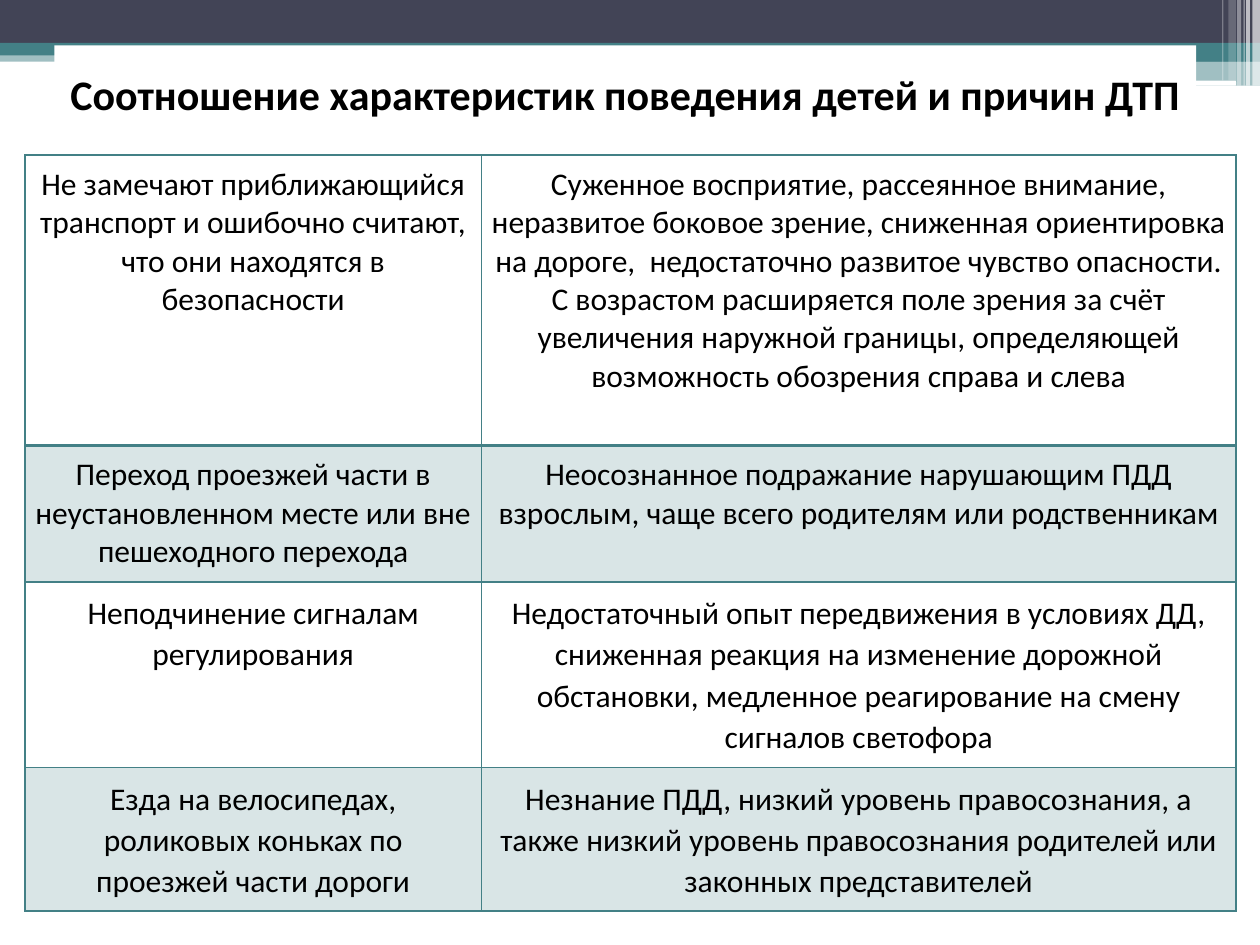
from lxml.etree import SubElement
from pptx import Presentation
from pptx.dml.color import RGBColor
from pptx.enum.shapes import MSO_SHAPE as Shape
from pptx.enum.text import MSO_ANCHOR as Anchor, PP_ALIGN as Align
from pptx.oxml.ns import qn
from pptx.util import Pt

TEAL, SLATE, WHITE, BLACK = "438086", "424456", "FFFFFF", "000000"

BANDS = [
    (0, 28.8, 720, 6.5, TEAL, 50),
    (0, 0, 720, 24.5, SLATE, 100),
    (0, 24.5, 720, 7.2, TEAL, 100),
    (426.2, 28.1, 293.8, 7.2, TEAL, 100),
    (426.2, 34.6, 293.8, 14.4, TEAL, 50),
]
STRIPES = [
    (715.7, 4.3, 49, 65),
    (712.1, 2.2, 49, 65),
    (710.6, 0.7, 49, 60),
    (707, 2.2, 49, 40),
    (702, 4.3, 46, 20),
    (698.4, 0.7, 46, 30),
]

TITLE = "Соотношение характеристик поведения детей и причин ДТП"
COLUMN_WIDTHS = [261, 431]
ROW_HEIGHTS = [166, 78, 106, 82]
ROWS = [
    ("Не замечают приближающийся транспорт и ошибочно считают, что они находятся в безопасности",
     "Суженное восприятие, рассеянное внимание, неразвитое боковое зрение, сниженная "
     "ориентировка на дороге,  недостаточно развитое чувство опасности. С возрастом "
     "расширяется поле зрения за счёт увеличения наружной границы, определяющей "
     "возможность обозрения справа и слева"),
    ("Переход проезжей части в неустановленном месте или вне пешеходного перехода",
     "Неосознанное подражание нарушающим ПДД взрослым, чаще всего родителям или родственникам"),
    ("Неподчинение сигналам регулирования",
     "Недостаточный опыт передвижения в условиях ДД, сниженная реакция на изменение "
     "дорожной обстановки, медленное реагирование на смену сигналов светофора"),
    ("Езда на велосипедах, роликовых коньках по проезжей части дороги",
     "Незнание ПДД, низкий уровень правосознания, а также низкий уровень правосознания "
     "родителей или законных представителей"),
]


def rgb(colour):
    """Turn a hex string into a colour."""
    return RGBColor.from_string(colour)


def paint(fill, properties, colour, opacity=100):
    """Fill an object with a solid colour at an opacity in percent."""
    fill.solid()
    fill.fore_color.rgb = rgb(colour)
    if opacity < 100:
        tone = properties.find(qn("a:solidFill"))[0]
        SubElement(tone, qn("a:alpha"), val=str(opacity * 1000))


def add_block(page, left, top, width, height, colour, opacity=100, kind=Shape.RECTANGLE):
    """Add a plain shape without a line or a shadow."""
    block = page.shapes.add_shape(kind, Pt(left), Pt(top), Pt(width), Pt(height))
    block.shadow.inherit = False
    block.line.fill.background()
    paint(block.fill, block._element.spPr, colour, opacity)
    return block


def write(frame, text, size=18, bold=False, spacing=None, after=None):
    """Write one centred paragraph."""
    frame.word_wrap = True
    para = frame.paragraphs[0]
    para.alignment = Align.CENTER
    if spacing:
        para.line_spacing = spacing
    if after:
        para.space_after = Pt(after)
    span = para.add_run()
    span.text = text
    span.font.name = "Calibri"
    span.font.size = Pt(size)
    span.font.bold = bold
    span.font.color.rgb = rgb(BLACK)


def add_borders(cell, top=1, bottom=1):
    """Draw the four borders of a cell with widths in points."""
    properties = cell._tc.get_or_add_tcPr()
    for side, width in {"L": 1, "R": 1, "T": top, "B": bottom}.items():
        line = SubElement(properties, qn(f"a:ln{side}"), w=str(Pt(width)))
        solid = SubElement(line, qn("a:solidFill"))
        SubElement(solid, qn("a:srgbClr"), val=TEAL)


def add_header(page):
    """Add the coloured bands and the thin stripes at the top."""
    for band in BANDS:
        add_block(page, *band)
    add_block(page, 580.3, 46.1, 126, 2.9, WHITE, kind=Shape.ROUNDED_RECTANGLE)
    for left, width, height, opacity in STRIPES:
        add_block(page, left, 0, width, height, WHITE, opacity)


def add_title(page):
    """Add the title in a white box."""
    box = page.shapes.add_textbox(Pt(31), Pt(26), Pt(652.5), Pt(45.3))
    paint(box.fill, box._element.spPr, WHITE)
    box.text_frame.vertical_anchor = Anchor.BOTTOM
    write(box.text_frame, TITLE, size=24, bold=True)


def add_behaviour_table(page):
    """Add the table of behaviours and their causes."""
    table = page.shapes.add_table(
        len(ROWS), len(COLUMN_WIDTHS), Pt(14.2), Pt(88.6),
        Pt(sum(COLUMN_WIDTHS)), Pt(sum(ROW_HEIGHTS))).table
    table.first_row = table.horz_banding = False
    for column, width in zip(table.columns, COLUMN_WIDTHS):
        column.width = Pt(width)
    for index, (height, texts) in enumerate(zip(ROW_HEIGHTS, ROWS)):
        table.rows[index].height = Pt(height)
        spacing, after = (1.07, 8) if index > 1 else (None, None)
        for cell, text in zip(table.rows[index].cells, texts):
            cell.margin_left = cell.margin_right = Pt(5.8)
            cell.margin_top = cell.margin_bottom = Pt(5.8)
            write(cell.text_frame, text, spacing=spacing, after=after)
            add_borders(cell, top=2 if index == 1 else 1, bottom=2 if index == 0 else 1)
            if index % 2:
                paint(cell.fill, cell._tc.tcPr, TEAL, 20)
            else:
                cell.fill.background()


def main():
    """Build the slide and save it."""
    deck = Presentation()
    deck.slide_width, deck.slide_height = Pt(720), Pt(540)
    page = deck.slides.add_slide(deck.slide_layouts[6])
    add_header(page)
    add_title(page)
    add_behaviour_table(page)
    deck.save("out.pptx")


if __name__ == "__main__":
    main()
